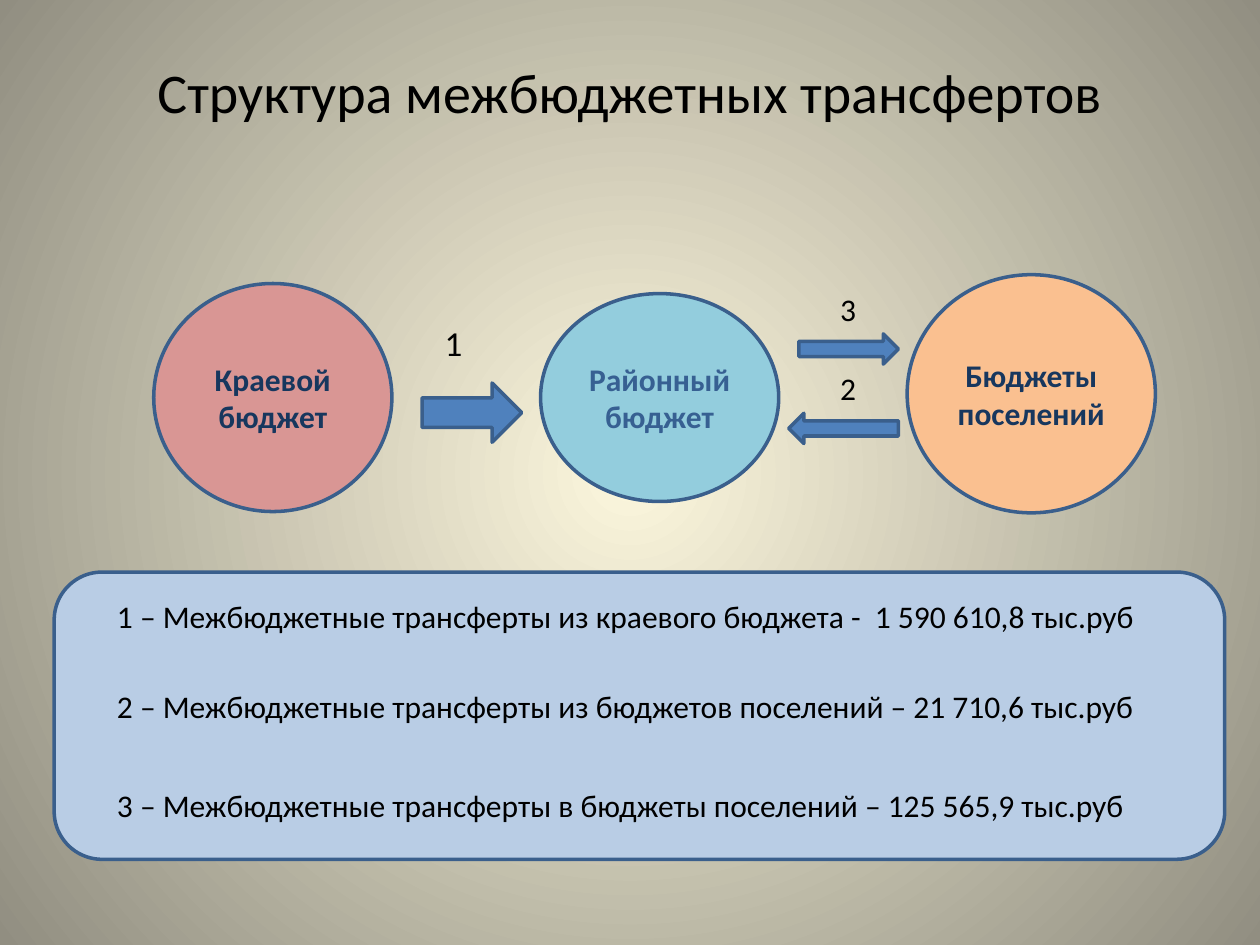
"""Builds a slide on the structure of transfers between budgets."""
import pptx
import pptx.dml.color
import pptx.enum.shapes
import pptx.enum.text
import pptx.oxml
import pptx.oxml.ns
import pptx.util

Inches = pptx.util.Inches
SHAPE = pptx.enum.shapes.MSO_SHAPE
ALIGN = pptx.enum.text.PP_ALIGN
ANCHOR = pptx.enum.text.MSO_ANCHOR

THEME = {
    "font": "Calibri", "title": 32, "body": 18, "label": 20, "line_width": 2,
    "text": "000000", "line": "3A5F8C", "arrow": "4F81BD", "panel": "B9CDE5",
    "glow": "FCF7DD", "edge": "918E81", "navy": "17375E", "blue": "376092",
    "region": "D99694", "district": "93CDDD", "settlement": "FAC090",
}

TITLE = "Структура межбюджетных трансфертов"
BUDGETS = [
    ("Краевой бюджет", "region", "navy", (1.22, 2.25, 1.89, 1.81)),
    ("Районный бюджет", "district", "blue", (4.29, 2.33, 1.89, 1.65)),
    ("Бюджеты поселений", "settlement", "navy", (7.2, 2.18, 1.97, 1.89)),
]
ARROWS = [
    ((3.35, 3.04, 0.79, 0.47), 0),
    ((6.34, 2.65, 0.79, 0.24), 0),
    ((6.26, 3.28, 0.87, 0.24), 180),
]
LABELS = [
    ("1", "label", (3.43, 2.5, 0.35, 0.44)),
    ("3", "body", (6.57, 2.25, 0.33, 0.4)),
    ("2", "body", (6.57, 2.88, 0.33, 0.4)),
]
PANEL = (0.43, 4.54, 9.29, 2.28)
LEGEND = [
    ("1 – Межбюджетные трансферты из краевого бюджета -  1 590 610,8 тыс.руб", 4.69),
    ("2 – Межбюджетные трансферты из бюджетов поселений – 21 710,6 тыс.руб", 5.4),
    ("3 – Межбюджетные трансферты в бюджеты поселений – 125 565,9 тыс.руб", 6.19),
]


def rgb(name):
    return pptx.dml.color.RGBColor.from_string(THEME[name])


def box(at):
    return [Inches(v) for v in at]


def write(tf, text, size="body", color="text", bold=False, align=ALIGN.LEFT):
    p = tf.paragraphs[0]
    p.alignment = align
    r = p.add_run()
    r.text = text
    r.font.name = THEME["font"]
    r.font.size = pptx.util.Pt(THEME[size])
    r.font.bold = bold
    r.font.color.rgb = rgb(color)


def add_shape(s, kind, at, fill):
    sp = s.shapes.add_shape(kind, *box(at))
    sp.shadow.inherit = False
    sp.fill.solid()
    sp.fill.fore_color.rgb = rgb(fill)
    sp.line.color.rgb = rgb("line")
    sp.line.width = pptx.util.Pt(THEME["line_width"])
    return sp


def add_text(s, text, at, size="body"):
    tf = s.shapes.add_textbox(*box(at)).text_frame
    tf.word_wrap = True
    write(tf, text, size)


def set_background(s):
    fill = s.background.fill
    fill.gradient()
    for stop, color in zip(fill.gradient_stops, ("glow", "edge")):
        stop.color.rgb = rgb(color)
    qn = pptx.oxml.ns.qn
    grad = s.element.find(".//" + qn("a:gradFill"))
    radial = pptx.oxml.parse_xml(
        f'<a:path {pptx.oxml.ns.nsdecls("a")} path="circle">'
        '<a:fillToRect l="50000" t="50000" r="50000" b="50000"/></a:path>')
    grad.replace(grad.find(qn("a:lin")), radial)


def main():
    prs = pptx.Presentation()
    prs.slide_width, prs.slide_height = Inches(10), Inches(7.5)
    s = prs.slides.add_slide(prs.slide_layouts[5])
    set_background(s)

    title = s.shapes.title
    title.left, title.top, title.width, title.height = box((0.5, 0.3, 9, 0.85))
    title.text_frame.vertical_anchor = ANCHOR.MIDDLE
    write(title.text_frame, TITLE, "title", align=ALIGN.CENTER)

    for text, fill, color, at in BUDGETS:
        tf = add_shape(s, SHAPE.OVAL, at, fill).text_frame
        tf.word_wrap = True
        tf.vertical_anchor = ANCHOR.MIDDLE
        write(tf, text, color=color, bold=True, align=ALIGN.CENTER)
    for at, rotation in ARROWS:
        add_shape(s, SHAPE.RIGHT_ARROW, at, "arrow").rotation = rotation
    for text, size, at in LABELS:
        add_text(s, text, at, size)

    add_shape(s, SHAPE.ROUNDED_RECTANGLE, PANEL, "panel")
    for text, top in LEGEND:
        add_text(s, text, (0.83, top, 8.82, 0.4))
    prs.save("out.pptx")


if __name__ == "__main__":
    main()
